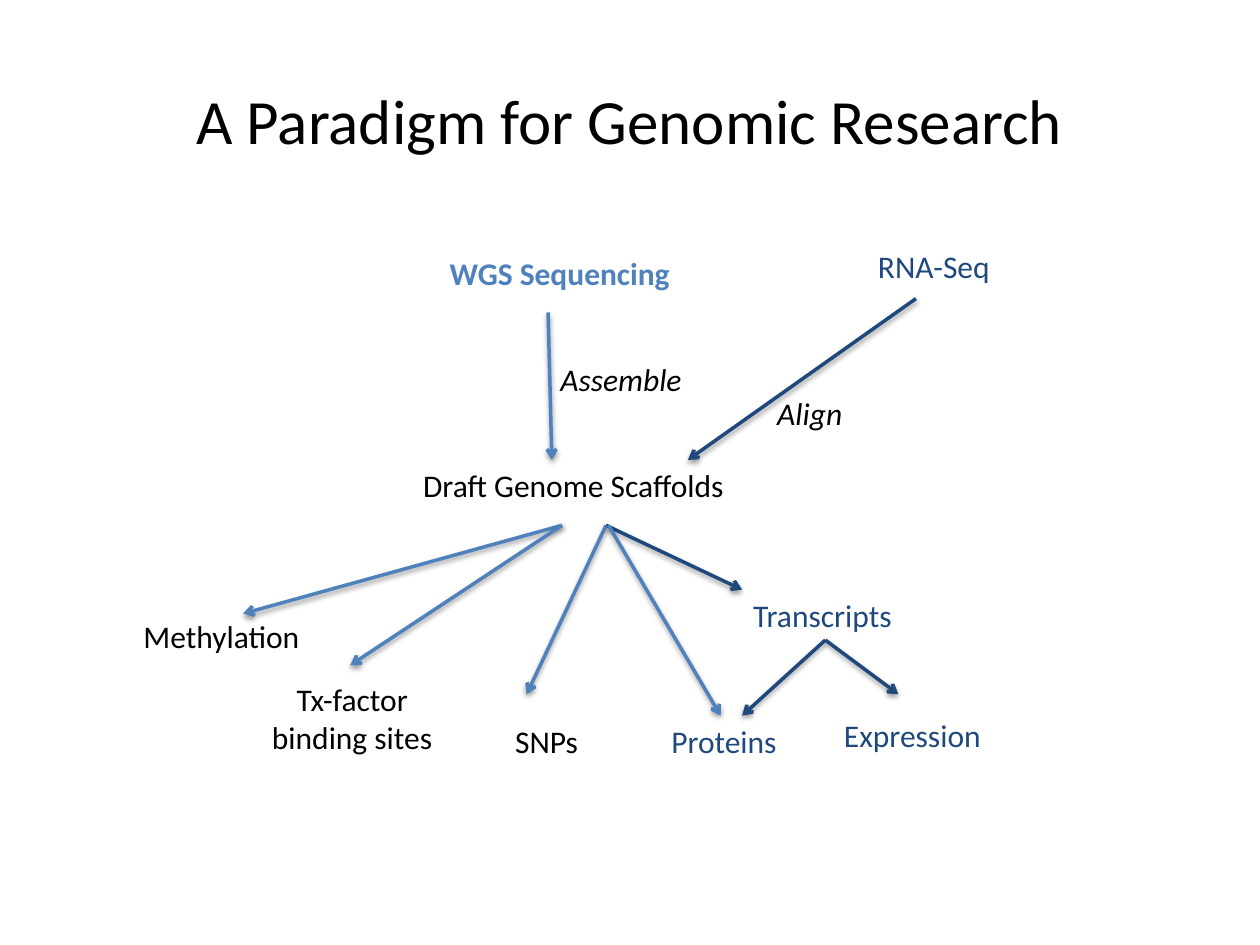
from dataclasses import dataclass
from lxml import etree
from pptx import Presentation
from pptx.dml.color import RGBColor
from pptx.enum.shapes import MSO_CONNECTOR
from pptx.enum.text import MSO_ANCHOR, MSO_AUTO_SIZE, PP_ALIGN
from pptx.oxml.ns import qn
from pptx.util import Inches, Pt

STRAIGHT = MSO_CONNECTOR.STRAIGHT
LEFT, CENTER = PP_ALIGN.LEFT, PP_ALIGN.CENTER
MIDDLE = MSO_ANCHOR.MIDDLE
FIT_SHAPE = MSO_AUTO_SIZE.SHAPE_TO_FIT_TEXT
BOTTOM_SITE = 2


@dataclass(frozen=True)
class Theme:
    font: str = "Calibri"
    ink: str = "000000"
    genome: str = "4F81BD"
    rna: str = "1F497D"
    title_size: int = 36
    label_size: int = 18
    line_width: int = 2


THEME = Theme()
COLUMNS, ROWS = 100, 75
ONE_LINE, EXTRA_LINE = 4, 3.1

TITLE = "A Paradigm for Genomic Research"
TITLE_BOX = (2.1, 3.2, 95.7, 12.5)

LABELS = [
    ("WGS Sequencing", 34.7, 19.7, 19.8, {"color": THEME.genome, "bold": True}),
    ("RNA-Seq", 68.7, 19.1, 11, {"color": THEME.rna}),
    ("Assemble", 43.5, 28.1, 12.3, {"italic": True}),
    ("Align", 60.7, 30.8, 7.9, {"italic": True}),
    ("Draft Genome Scaffolds", 32.6, 36.5, 26.3, {}),
    ("Methylation", 10.4, 48.5, 14.6, {}),
    ("Tx-factor\nbinding sites", 20.5, 53.5, 14.9, {"align": CENTER}),
    ("SNPs", 39.9, 56.8, 7.1, {}),
    ("Proteins", 52.3, 56.8, 10.6, {"color": THEME.rna}),
    ("Transcripts", 58.8, 46.8, 13.4, {"color": THEME.rna}),
    ("Expression", 66, 56.3, 13, {"color": THEME.rna}),
]

SCAFFOLD_LEFT, SCAFFOLD_RIGHT = (44.6, 41.7), (48.1, 41.7)
ARROWS = [
    ((43.5, 24.8), (43.8, 36.5), THEME.genome),
    ((72.7, 23.7), (54.6, 36.5), THEME.rna),
    (SCAFFOLD_RIGHT, (58.9, 46.8), THEME.rna),
    (SCAFFOLD_LEFT, (19.3, 48.7), THEME.genome),
    (SCAFFOLD_LEFT, (27.8, 52.8), THEME.genome),
    (SCAFFOLD_RIGHT, (41.8, 55.1), THEME.genome),
    ((48.3, 41.7), (57.2, 56.8), THEME.genome),
    ("Transcripts", (58.9, 56.8), THEME.rna),
    ("Transcripts", (71.3, 55.1), THEME.rna),
]

prs = Presentation()
prs.slide_width, prs.slide_height = Inches(10), Inches(7.5)
slide = prs.slides.add_slide(prs.slide_layouts[5])


def grid(column, row):
    return (round(prs.slide_width * column / COLUMNS),
            round(prs.slide_height * row / ROWS))


def write(frame, text, size=THEME.label_size, color=THEME.ink,
          bold=False, italic=False, align=LEFT):
    paragraph = frame.paragraphs[0]
    paragraph.text = text
    paragraph.alignment = align
    for run in paragraph.runs:
        font = run.font
        font.name, font.size = THEME.font, Pt(size)
        font.bold, font.italic = bold, italic
        font.color.rgb = RGBColor.from_string(color)


def add_label(text, left, top, width, style):
    height = ONE_LINE + EXTRA_LINE * text.count("\n")
    label = slide.shapes.add_textbox(*grid(left, top), *grid(width, height))
    label.text_frame.word_wrap = False
    label.text_frame.auto_size = FIT_SHAPE
    write(label.text_frame, text, **style)
    return label


def add_arrow(start, end, color):
    source = labels.get(start)
    begin = (0, 0) if source else grid(*start)
    arrow = slide.shapes.add_connector(STRAIGHT, *begin, *grid(*end))
    if source:
        arrow.begin_connect(source, BOTTOM_SITE)
    arrow.line.width = Pt(THEME.line_width)
    arrow.line.color.rgb = RGBColor.from_string(color)
    etree.SubElement(arrow.line._get_or_add_ln(), qn("a:tailEnd"), type="arrow")
    effects = etree.SubElement(arrow._element.spPr, qn("a:effectLst"))
    shadow = etree.SubElement(
        effects, qn("a:outerShdw"), blurRad=str(Pt(3.1)), dist=str(Pt(1.6)),
        dir="5400000", rotWithShape="0")
    shade = etree.SubElement(shadow, qn("a:srgbClr"), val=THEME.ink)
    etree.SubElement(shade, qn("a:alpha"), val="38000")


title = slide.shapes.title
title.left, title.top = grid(*TITLE_BOX[:2])
title.width, title.height = grid(*TITLE_BOX[2:])
title.text_frame.vertical_anchor = MIDDLE
write(title.text_frame, TITLE, size=THEME.title_size, align=CENTER)

labels = {label[0]: add_label(*label) for label in LABELS}
for arrow in ARROWS:
    add_arrow(*arrow)

prs.save("out.pptx")
